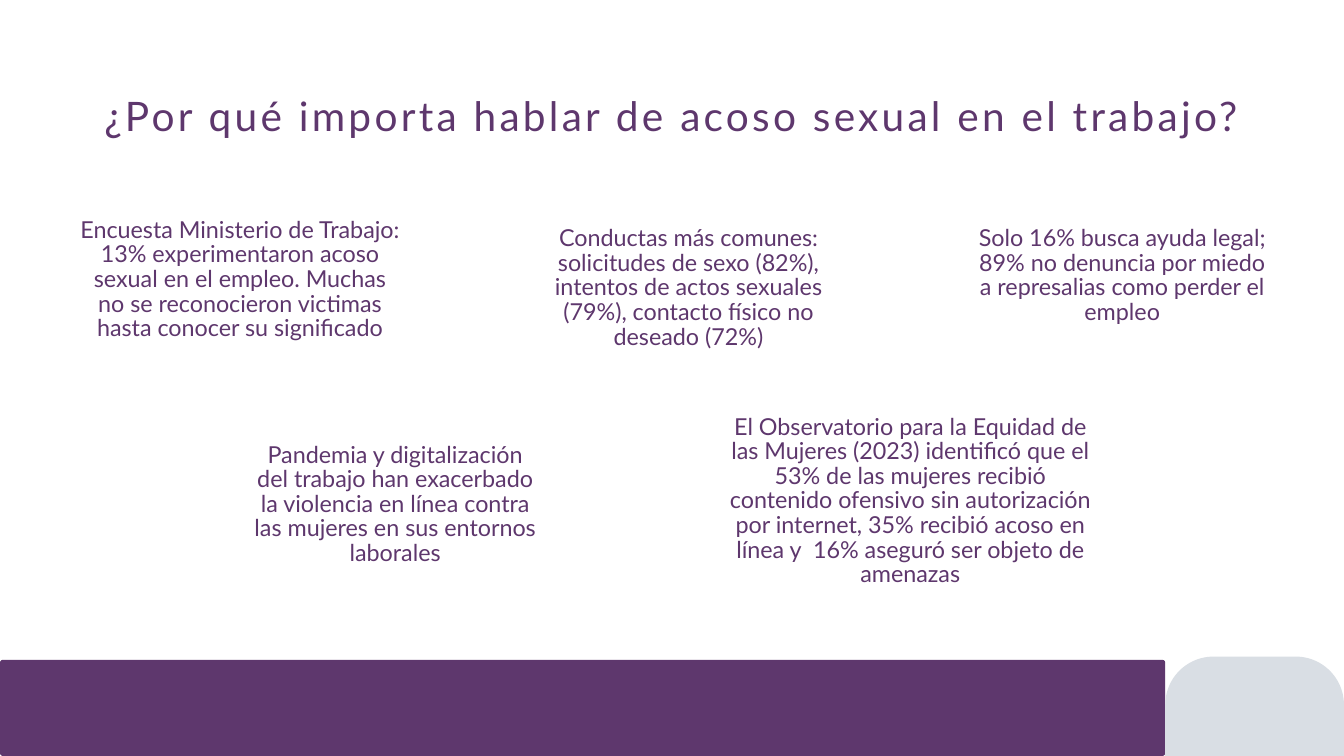
"""Build the slide on why workplace sexual harassment matters."""
import dataclasses

import pptx
import pptx.dml.color
import pptx.enum.shapes
import pptx.enum.text
import pptx.util

Pt = pptx.util.Pt
RGB = pptx.dml.color.RGBColor


@dataclasses.dataclass(frozen=True)
class Theme:
    font: str = "Lato"
    purple: str = "5E376D"
    grey: str = "D9DEE4"
    title_size: float = 43.5
    body_size: float = 25
    body_leading: float = 26.4


theme = Theme()
deck = pptx.Presentation()
deck.slide_width, deck.slide_height = Pt(1440), Pt(810)
slide = deck.slides.add_slide(deck.slide_layouts[6])


def add_text(text, *, left, top, width, height, size=theme.body_size,
             leading=theme.body_leading, spacing=0, inset=(0, 0)):
    box = slide.shapes.add_textbox(Pt(left), Pt(top), Pt(width), Pt(height))
    frame = box.text_frame
    frame.word_wrap = True
    frame.auto_size = pptx.enum.text.MSO_AUTO_SIZE.SHAPE_TO_FIT_TEXT
    frame.margin_left = frame.margin_right = Pt(inset[0])
    frame.margin_top = frame.margin_bottom = Pt(inset[1])
    frame.text = text
    for paragraph in frame.paragraphs:
        paragraph.alignment = pptx.enum.text.PP_ALIGN.CENTER
        paragraph.line_spacing = Pt(leading)
        for run in paragraph.runs:
            run.font.name = theme.font
            run.font.size = Pt(size)
            run.font.color.rgb = RGB.from_string(theme.purple)
            if spacing:
                run.font._element.set("spc", str(round(spacing * 100)))


add_text("¿Por qué importa hablar de acoso sexual en el trabajo?",
         left=80.64, top=106.56, width=1278, height=46.8,
         size=theme.title_size, leading=theme.title_size, spacing=3.5)

findings = [
    ("Encuesta Ministerio de Trabajo: 13% experimentaron acoso sexual en el empleo. "
     "Muchas no se reconocieron victimas hasta conocer su significado",
     84.6, 234, 344.88, 158.4),
    ("Conductas más comunes: solicitudes de sexo (82%), intentos de actos sexuales (79%), "
     "contacto físico no deseado (72%)",
     565.2, 242.9, 344.88, 131),
    ("Solo 16% busca ayuda legal; 89% no denuncia por miedo a represalias como perder el empleo",
     1045.44, 242.9, 313.92, 105.8),
    ("Pandemia y digitalización del trabajo han exacerbado la violencia en línea contra "
     "las mujeres en sus entornos laborales",
     267.5, 474.8, 311.76, 211),
]
for finding, left, top, width, height in findings:
    add_text(finding, left=left, top=top, width=width, height=height)

footer_split = 1248.5
footer = [
    (0, footer_split, 707, 103, theme.purple, 0.03),
    (footer_split, 1440, 703.5, 333.4, theme.grey, 0.27),
]
for left, right, top, height, colour, rounding in footer:
    band = slide.shapes.add_shape(pptx.enum.shapes.MSO_SHAPE.ROUNDED_RECTANGLE,
                                  Pt(left), Pt(top), Pt(right - left), Pt(height))
    band.adjustments[0] = rounding
    band.shadow.inherit = False
    band.fill.solid()
    band.fill.fore_color.rgb = RGB.from_string(colour)
    band.line.fill.background()

add_text("El Observatorio para la Equidad de las Mujeres (2023) identificó que el\n"
         "53% de las mujeres recibió contenido ofensivo sin autorización por internet, "
         "35% recibió acoso en línea y  16% aseguró ser objeto de amenazas",
         left=771.2, top=441.2, width=408.24, height=297.4, inset=(7.2, 3.6))

deck.save("out.pptx")
